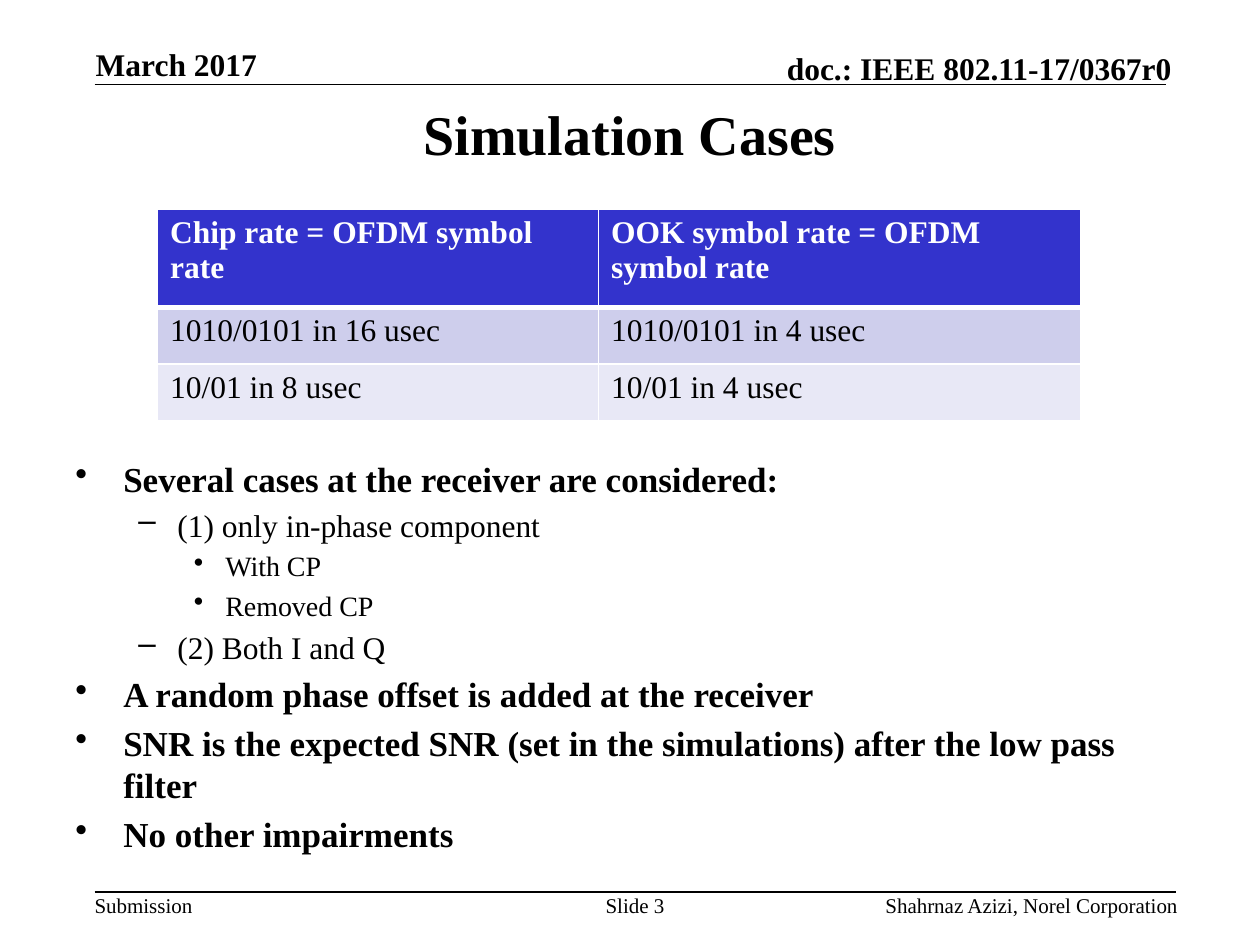
from dataclasses import dataclass

from lxml.etree import SubElement
from pptx import Presentation
from pptx.dml.color import RGBColor
from pptx.enum.shapes import MSO_CONNECTOR
from pptx.enum.text import MSO_ANCHOR as Anchor, PP_ALIGN as Align
from pptx.oxml.ns import qn
from pptx.util import Emu, Pt

EMU_PER_PX = 9144  # 100 px to the inch


@dataclass(frozen=True)
class Theme:
    font: str = "Times New Roman"
    ink: str = "000000"
    white: str = "FFFFFF"
    row_fills: tuple = ("3333CC", "CECEEC", "E8E8F6")
    title: int = 32
    header: int = 18
    footer: int = 12
    table: int = 18
    levels: tuple = (20, 18, 16)


THEME = Theme()

# Per level: bullet, left margin and hanging indent in px
BULLETS = (("•", 38, 38), ("–", 81, 31), ("•", 119, 25))

CASES = (
    ("Chip rate = OFDM symbol rate", "OOK symbol rate = OFDM symbol rate"),
    ("1010/0101 in 16 usec", "1010/0101 in 4 usec"),
    ("10/01 in 8 usec", "10/01 in 4 usec"),
)

POINTS = (
    (0, "Several cases at the receiver are considered:"),
    (1, "(1) only in-phase component"),
    (2, "With CP"),
    (2, "Removed CP"),
    (1, "(2) Both I and Q"),
    (0, "A random phase offset is added at the receiver"),
    (0, "SNR is the expected SNR (set in the simulations) after the low pass filter"),
    (0, "No other impairments"),
)


def px(n):
    return Emu(n * EMU_PER_PX)


def rgb(color):
    return RGBColor.from_string(color)


def style(p, size, bold=False, color=THEME.ink):
    font = p.font
    font.name, font.size, font.bold = THEME.font, Pt(size), bold
    font.color.rgb = rgb(color)


def add_frame(slide, box, margins=(0, 0), anchor=Anchor.TOP):
    """Add a wrapping text box; margins are horizontal and vertical px."""
    tf = slide.shapes.add_textbox(*map(px, box)).text_frame
    tf.word_wrap = True
    tf.vertical_anchor = anchor
    tf.margin_left = tf.margin_right = px(margins[0])
    tf.margin_top = tf.margin_bottom = px(margins[1])
    return tf


def add_label(slide, box, text, size, bold=False, align=Align.LEFT, anchor=Anchor.TOP):
    p = add_frame(slide, box, anchor=anchor).paragraphs[0]
    p.text, p.alignment = text, align
    style(p, size, bold)


def add_rule(slide, left, right, y):
    line = slide.shapes.add_connector(MSO_CONNECTOR.STRAIGHT, px(left), px(y), px(right), px(y))
    line.line.color.rgb = rgb(THEME.ink)
    line.line.width = Pt(1)
    SubElement(line._element.spPr, qn("a:effectLst"))


def set_borders(cell, **widths):
    """Draw white cell borders; L, R, T and B are widths in points."""
    tc_pr = cell._tc.get_or_add_tcPr()
    for side in "LRTB":
        ln = SubElement(tc_pr, qn(f"a:ln{side}"), w=str(Pt(widths.get(side, 1))))
        fill = SubElement(ln, qn("a:solidFill"))
        SubElement(fill, qn("a:srgbClr"), val=THEME.white)


def add_case_table(slide, left, top, widths, heights):
    table = slide.shapes.add_table(
        len(heights), len(widths), px(left), px(top), px(sum(widths)), px(sum(heights))
    ).table
    for column, width in zip(table.columns, widths):
        column.width = px(width)
    for i, (row, height) in enumerate(zip(table.rows, heights)):
        row.height = px(height)
        header = i == 0
        for cell, text in zip(row.cells, CASES[i]):
            set_borders(cell, T=3 if i == 1 else 1, B=3 if header else 1)
            cell.fill.solid()
            cell.fill.fore_color.rgb = rgb(THEME.row_fills[i])
            cell.text = text
            style(cell.text_frame.paragraphs[0], THEME.table, header,
                  THEME.white if header else THEME.ink)


def add_bullets(slide, box):
    tf = add_frame(slide, box, margins=(10, 5))
    for i, (level, text) in enumerate(POINTS):
        p = tf.add_paragraph() if i else tf.paragraphs[0]
        p.text, p.level = text, level
        char, margin, hang = BULLETS[level]
        size = THEME.levels[level]
        p_pr = p._p.get_or_add_pPr()
        p_pr.set("marL", str(px(margin)))
        p_pr.set("indent", str(-px(hang)))
        SubElement(p_pr, qn("a:buChar"), char=char)
        p.space_before = Pt(size * 0.2 if i else 0)
        style(p, size, bold=level == 0)


def add_header(slide):
    add_rule(slide, 75, 925, 67)
    add_label(slide, (76, 36, 205, 30), "March 2017", THEME.header, True, anchor=Anchor.BOTTOM)
    add_label(slide, (547, 39, 383, 30), "doc.: IEEE 802.11-17/0367r0", THEME.header, True,
              Align.RIGHT, Anchor.BOTTOM)


def add_footer(slide):
    add_rule(slide, 75, 933, 708)
    for left, width, text, align in (
        (75, 78, "Submission", Align.LEFT),
        (475, 58, "Slide 3", Align.CENTER),
        (602, 333, "Shahrnaz Azizi, Norel Corporation", Align.RIGHT),
    ):
        add_label(slide, (left, 708, width, 20), text, THEME.footer, align=align)


def main():
    prs = Presentation()
    prs.slide_width, prs.slide_height = px(1000), px(750)
    slide = prs.slides.add_slide(prs.slide_layouts[6])
    add_header(slide)
    add_label(slide, (75, 75, 850, 61), "Simulation Cases", THEME.title, True,
              Align.CENTER, Anchor.MIDDLE)
    add_case_table(slide, 125, 166, widths=(350, 383), heights=(78, 45, 45))
    add_bullets(slide, (50, 358, 908, 350))
    add_footer(slide)
    prs.save("out.pptx")


if __name__ == "__main__":
    main()
